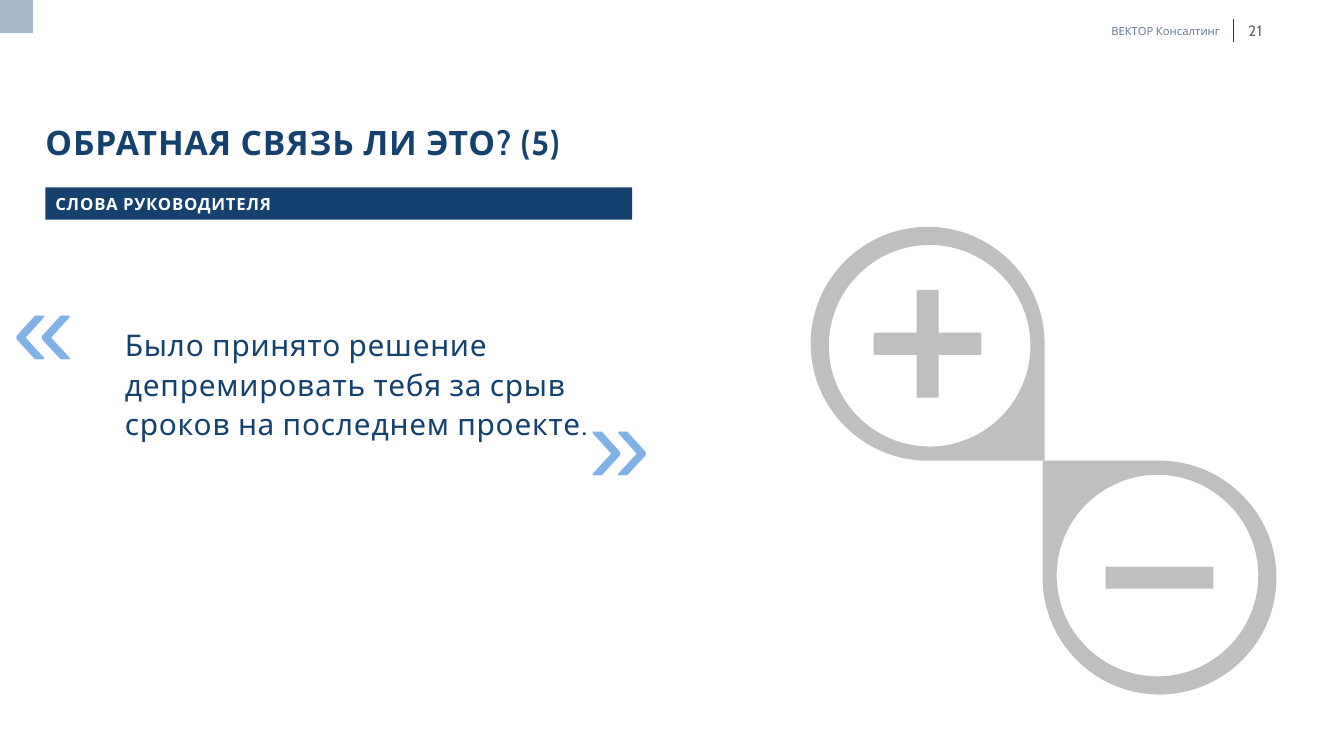
from math import cos, radians, sin

from pptx import Presentation
from pptx.dml.color import RGBColor
from pptx.enum import shapes as sh, text as tx
from pptx.oxml.ns import qn
from pptx.util import Inches, Pt

NAVY, SKY, GREY = "15416F", "80B2E7", "BFBFBF"
LEFT, MID, RIGHT = tx.PP_ALIGN.LEFT, tx.PP_ALIGN.CENTER, tx.PP_ALIGN.RIGHT
TOP, MIDDLE, BOTTOM = tx.MSO_ANCHOR.TOP, tx.MSO_ANCHOR.MIDDLE, tx.MSO_ANCHOR.BOTTOM

# Text, box (left, top, width, height), format
TEXTS = [
    ("ВЕКТОР Консалтинг", (10.73, 0.24, 1.37, 0.13),
     dict(size=8, color="697A98", align=RIGHT, anchor=MIDDLE, inset=False)),
    ("21", (12.24, 0.24, 0.42, 0.13),
     dict(size=10.67, color="666666", gap=0.4, align=MID, anchor=MIDDLE, inset=False)),
    ("ОБРАТНАЯ СВЯЗЬ ЛИ ЭТО? (5)", (0.45, 1.21, 5.82, 0.4),
     dict(size=24, bold=True, gap=0.67, anchor=BOTTOM, inset=False)),
    ("СЛОВА РУКОВОДИТЕЛЯ", (0.45, 1.86, 5.82, 0.32),
     dict(size=12, bold=True, color="FFFFFF", fill=NAVY, gap=0.53, anchor=MIDDLE)),
    ("«", (0.03, 2.49, 0.91, 1.45), dict(size=80, font="Arial", color=SKY, gap=0.4)),
    ("»", (5.74, 3.64, 0.91, 1.45), dict(size=80, font="Arial", color=SKY, gap=0.4)),
    ("Было принято решение депремировать тебя за срыв сроков на последнем проекте.",
     (1.14, 3.16, 5.16, 1.29), dict(size=21.33, gap=0.53, space=1.1)),
]
# Centre, direction of the tip, whether the sign has an upright bar
DROPS = [((9.2, 3.41), 1, True), ((11.5, 5.73), -1, False)]
OUTER, INNER, SHIFT = 1.16, 1.0, 0.02
LONG, THICK = 1.07, 0.22
BEND = 0.55  # handle length of a quarter circle of radius 1

prs = Presentation()
prs.slide_width, prs.slide_height = Inches(13.33), Inches(7.5)
slide = prs.slides.add_slide(prs.slide_layouts[6])


def rgb(code):
    return RGBColor.from_string(code)


def paint(shape, color):
    shape.shadow.inherit = False
    shape.fill.solid()
    shape.fill.fore_color.rgb = rgb(color)
    shape.line.fill.background()


def rect(box, color):
    shape = slide.shapes.add_shape(sh.MSO_SHAPE.RECTANGLE, *map(Inches, box))
    paint(shape, color)
    return shape


def write(words, box, size, font="Cabin", color=NAVY, bold=False, gap=0,
          fill=None, align=LEFT, anchor=TOP, inset=True, space=None):
    if fill:
        shape = rect(box, fill)
    else:
        shape = slide.shapes.add_textbox(*map(Inches, box))
    frame = shape.text_frame
    frame.word_wrap = True
    frame.vertical_anchor = anchor
    if not inset:
        frame.margin_left = frame.margin_right = 0
        frame.margin_top = frame.margin_bottom = 0
    para = frame.paragraphs[0]
    para.alignment = align
    if space:
        para.line_spacing = space
    run = para.add_run()
    run.text = words
    run.font.name, run.font.size, run.font.bold = font, Pt(size), bold
    run.font.color.rgb = rgb(color)
    if gap:
        run.font._element.set("spc", str(round(gap * 100)))


def arc(x, y, radius, start, turns, step):
    """Give the start, then two handles and an end for each quarter turn."""
    def spot(angle, bend):
        c, s = cos(radians(angle)), sin(radians(angle))
        return Inches(x + radius * (c - bend * s)), Inches(y + radius * (s + bend * c))

    way = BEND if step > 0 else -BEND
    points = [spot(start, 0)]
    for turn in range(turns):
        old = start + turn * step
        points += [spot(old, way), spot(old + step, -way), spot(old + step, 0)]
    return points


def curve(lines):
    """Turn each three straight segments into one Bezier curve."""
    for first, second, third in zip(lines[::3], lines[1::3], lines[2::3]):
        bend = first.makeelement(qn("a:cubicBezTo"), {})
        first.addprevious(bend)
        for line in (first, second, third):
            bend.append(line[0])
            line.getparent().remove(line)


def drop(x, y, way):
    """Draw a ring with one square corner, lower right or upper left."""
    edge = arc(x, y, way * OUTER, 90, 3, 90)
    tip = (Inches(x + way * OUTER), Inches(y + way * OUTER))
    hole = arc(x + way * SHIFT, y + way * SHIFT, INNER, 90, 4, -90)
    pen = slide.shapes.build_freeform(*edge[0])
    pen.add_line_segments(edge[1:] + [tip])
    pen.move_to(*hole[0])
    pen.add_line_segments(hole[1:])
    shape = pen.convert_to_shape()
    lines = list(shape._element.iter(qn("a:lnTo")))
    size = len(edge) - 1
    curve(lines[:size])
    curve(lines[-len(hole) + 1:] if len(lines) == size + len(hole) else lines[-12 - 1:-1])
    paint(shape, GREY)


def bar(x, y, wide, high):
    rect((x - wide / 2, y - high / 2, wide, high), GREY)


rect((0, 0, 0.33, 0.33), "AABACA")
rule = slide.shapes.add_connector(
    sh.MSO_CONNECTOR.STRAIGHT, *map(Inches, (12.23, 0.19, 12.23, 0.42)))
rule.line.color.rgb = rgb("333333")
rule.line.width = Pt(0.5)
props = rule._element.spPr
props.append(props.makeelement(qn("a:effectLst"), {}))

for (x, y), way, plus in DROPS:
    drop(x, y, way)
    bar(x, y, LONG, THICK)
    if plus:
        bar(x, y, THICK, LONG)

for words, box, style in TEXTS:
    write(words, box, **style)

prs.save("out.pptx")
